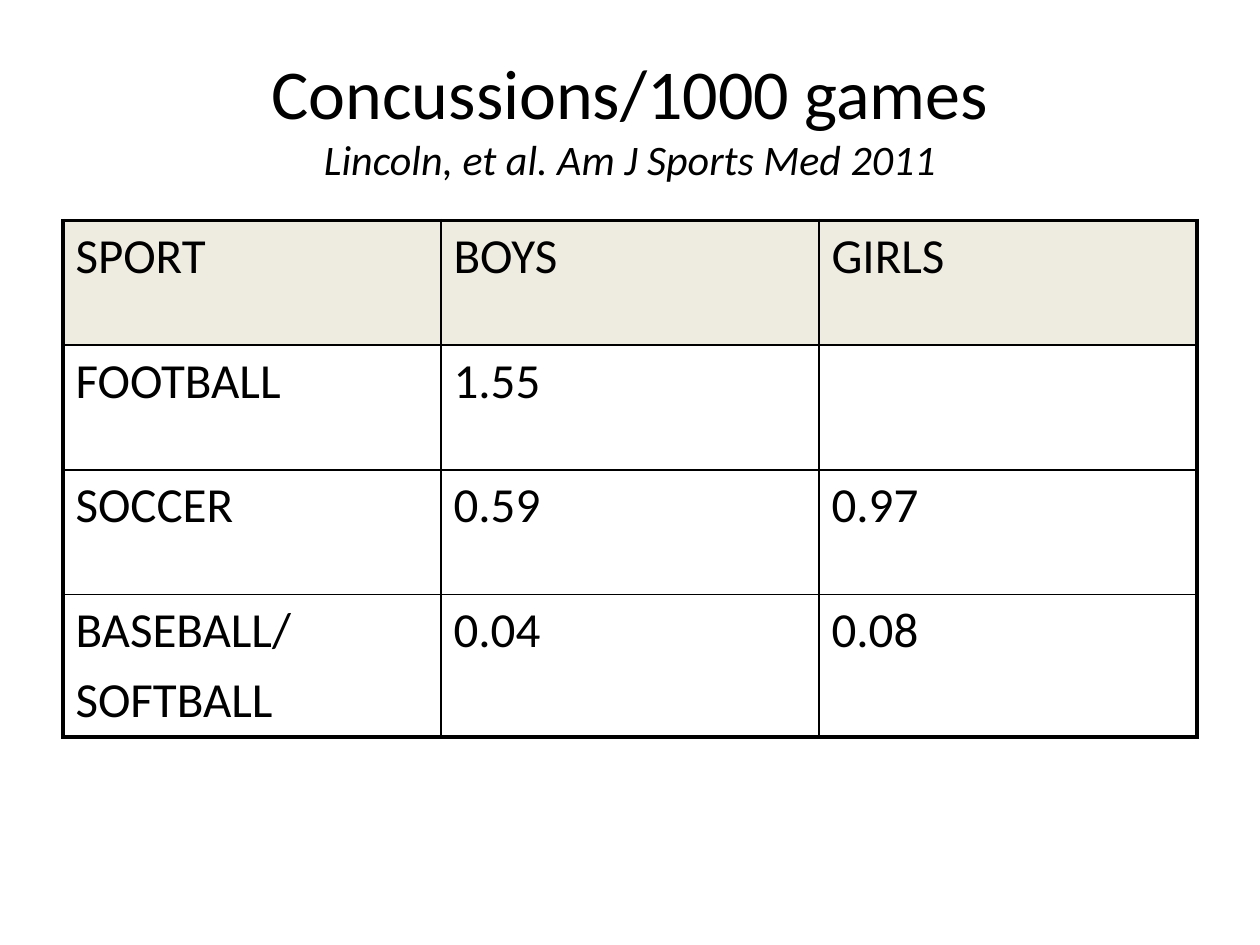
from dataclasses import dataclass

from lxml import etree
from pptx import Presentation
from pptx import util as u
from pptx.dml.color import RGBColor
from pptx.enum import text
from pptx.oxml import ns

COLORS = {"ink": "000000", "header": "EEECE1", "body": "FFFFFF"}
THIN, THICK = 1, 2.25
LEFT, WIDTH = 36, 648


@dataclass
class Row:
    height: float
    cells: tuple[str, ...]
    fill: str = "body"


ROWS = [
    Row(71.28, ("SPORT", "BOYS", "GIRLS"), "header"),
    Row(71.28, ("FOOTBALL", "1.55", "")),
    Row(71.28, ("SOCCER", "0.59", "0.97")),
    Row(81.36, ("BASEBALL/\nSOFTBALL", "0.04", "0.08")),
]


def add_run(p, content: str, size: float, italic: bool = False) -> None:
    r = p.add_run()
    r.text = content
    formats = {"name": "Calibri", "size": u.Pt(size), "italic": italic}
    for key, value in formats.items():
        setattr(r.font, key, value)
    r.font.color.rgb = RGBColor.from_string(COLORS["ink"])


def add_border(cell, side: str, width: float) -> None:
    ln = etree.SubElement(cell._tc.get_or_add_tcPr(), ns.qn(f"a:ln{side}"), w=str(u.Pt(width)))
    fill = etree.SubElement(ln, ns.qn("a:solidFill"))
    etree.SubElement(fill, ns.qn("a:srgbClr"), val=COLORS["ink"])


def add_title(s) -> None:
    tf = s.shapes.add_textbox(u.Pt(LEFT), u.Pt(21.6), u.Pt(WIDTH), u.Pt(90)).text_frame
    formats = {"word_wrap": True, "vertical_anchor": text.MSO_ANCHOR.MIDDLE}
    for key, value in formats.items():
        setattr(tf, key, value)
    p = tf.paragraphs[0]
    p.alignment = text.PP_ALIGN.CENTER
    add_run(p, "Concussions/1000 games", 40)
    p.add_line_break()
    add_run(p, "Lincoln, et al. Am J Sports Med 2011", 24, italic=True)


def fill_cell(cell, content: str, fill: str, borders: dict[str, float]) -> None:
    for side, width in borders.items():
        add_border(cell, side, width)
    cell.fill.solid()
    cell.fill.fore_color.rgb = RGBColor.from_string(COLORS[fill])
    tf = cell.text_frame
    for i, line in enumerate(content.splitlines()):
        p = tf.add_paragraph() if i else tf.paragraphs[0]
        if i:
            p.space_before = u.Pt(5.6)
        add_run(p, line, 28)


def add_rates_table(s, rows: list[Row]) -> None:
    columns = len(rows[0].cells)
    height = sum(row.height for row in rows)
    table = s.shapes.add_table(
        len(rows), columns, u.Pt(LEFT), u.Pt(126), u.Pt(WIDTH), u.Pt(height)
    ).table
    for i, row in enumerate(rows):
        table.rows[i].height = u.Pt(row.height)
        for j, content in enumerate(row.cells):
            outer = {"L": j == 0, "R": j == columns - 1, "T": i == 0, "B": i == len(rows) - 1}
            borders = {side: THICK if edge else THIN for side, edge in outer.items()}
            fill_cell(table.cell(i, j), content, row.fill, borders)


def main() -> None:
    prs = Presentation()
    prs.slide_width, prs.slide_height = u.Pt(720), u.Pt(540)
    s = prs.slides.add_slide(prs.slide_layouts[6])
    add_title(s)
    add_rates_table(s, ROWS)
    prs.save("out.pptx")


if __name__ == "__main__":
    main()
